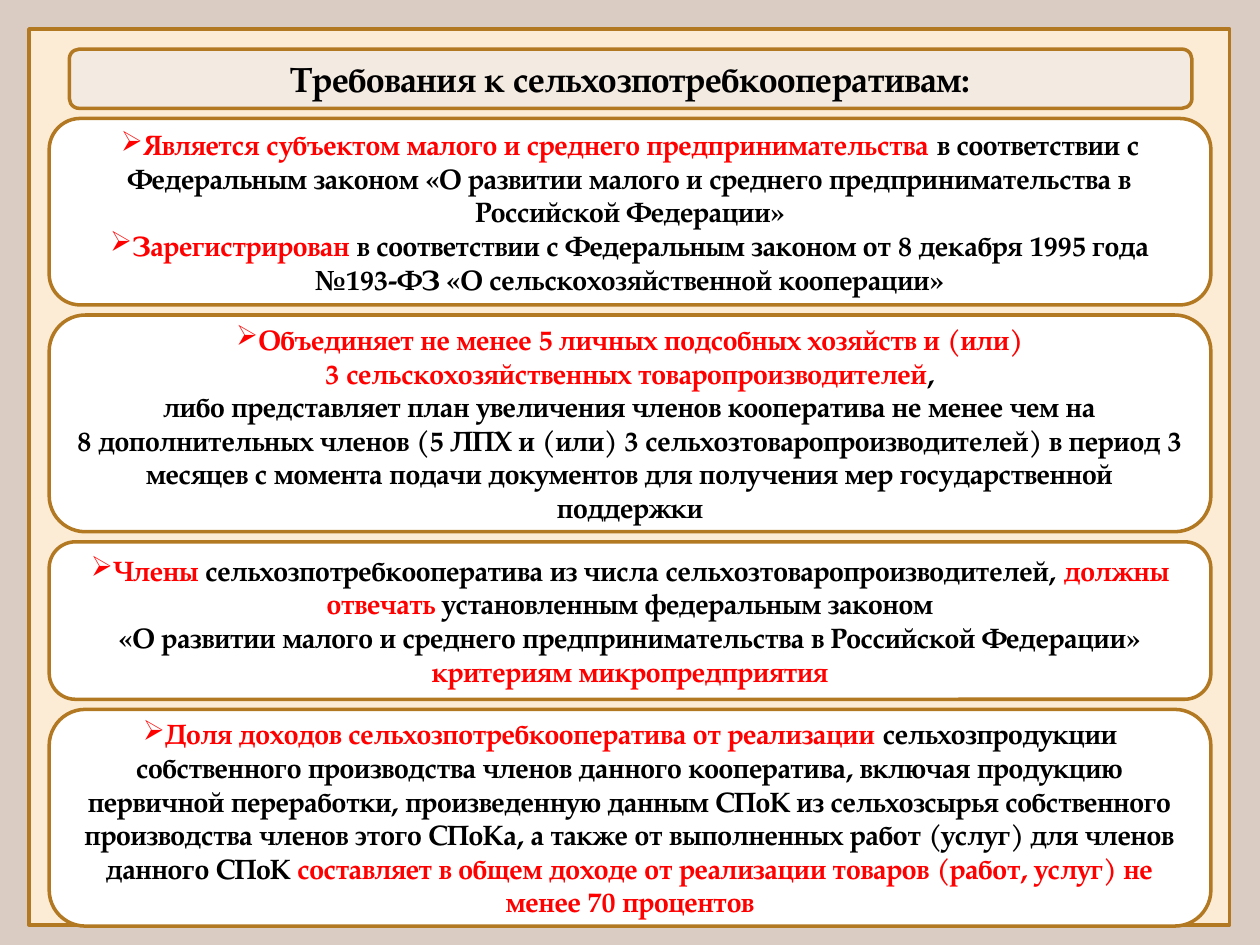
from lxml import etree
from pptx import Presentation
from pptx.dml.color import RGBColor
from pptx.enum.shapes import MSO_SHAPE
from pptx.enum.text import MSO_ANCHOR, PP_ALIGN
from pptx.oxml.ns import qn
from pptx.util import Inches, Pt

RECTANGLE = MSO_SHAPE.RECTANGLE
ROUNDED = MSO_SHAPE.ROUNDED_RECTANGLE
MIDDLE = MSO_ANCHOR.MIDDLE
CENTER = PP_ALIGN.CENTER

BACKDROP = RGBColor(0xDA, 0xCB, 0xC3)
CREAM = RGBColor(0xFC, 0xEC, 0xD5)
BEIGE = RGBColor(0xF3, 0xEA, 0xE2)
WHITE = RGBColor(0xFF, 0xFF, 0xFF)
BROWN = RGBColor(0xB2, 0x78, 0x22)
BLACK = RGBColor(0, 0, 0)
RED = RGBColor(0xFF, 0, 0)

FONT = "TeX Gyre Pagella"
BULLET = "➢"
CARD_LEFT, CARD_TOP, CARD_WIDTH, CARD_GAP = 0.39, 0.94, 9.22, 0.08

# Each card: height and paragraphs; a paragraph is (has bullet, spans).
REQUIREMENTS = [
    (1.48, [
        (True, [
            ("Является субъектом малого и среднего предпринимательства ", RED),
            ("в соответствии с Федеральным законом «О развитии малого и среднего "
             "предпринимательства в Российской Федерации»", BLACK)]),
        (True, [
            ("Зарегистрирован ", RED),
            ("в соответствии с Федеральным законом от 8 декабря 1995 года "
             "№193-ФЗ «О сельскохозяйственной кооперации»", BLACK)]),
    ]),
    (1.72, [
        (True, [("Объединяет не менее 5 личных подсобных хозяйств и (или)", RED)]),
        (False, [("3 сельскохозяйственных товаропроизводителей", RED), (",", BLACK)]),
        (False, [("либо представляет план увеличения членов кооператива "
                  "не менее чем на", BLACK)]),
        (False, [("8 дополнительных членов (5 ЛПХ и (или) 3 сельхозтоваропроизводителей) "
                  "в период 3 месяцев с момента подачи документов для получения мер "
                  "государственной поддержки", BLACK)]),
    ]),
    (1.25, [
        (True, [
            ("Члены", RED),
            (" сельхозпотребкооператива из числа сельхозтоваропроизводителей, ", BLACK),
            ("должны отвечать ", RED),
            ("установленным федеральным законом", BLACK)]),
        (False, [
            ("«О развитии малого и среднего предпринимательства "
             "в Российской Федерации» ", BLACK),
            ("критериям микропредприятия", RED)]),
    ]),
    (1.72, [
        (True, [
            ("Доля доходов сельхозпотребкооператива от реализации ", RED),
            ("сельхозпродукции собственного производства членов данного кооператива, "
             "включая продукцию первичной переработки, произведенную данным СПоК "
             "из сельхозсырья собственного производства членов этого СПоКа, а также "
             "от выполненных работ (услуг) для членов данного СПоК ", BLACK),
            ("составляет в общем доходе от реализации товаров (работ, услуг) "
             "не менее 70 процентов", RED)]),
    ]),
]


def add_panel(page, kind, left, top, width, height, fill):
    panel = page.shapes.add_shape(
        kind, Inches(left), Inches(top), Inches(width), Inches(height))
    panel.shadow.inherit = False
    panel.fill.solid()
    panel.fill.fore_color.rgb = fill
    panel.line.color.rgb = BROWN
    panel.line.width = Pt(2)
    return panel


def add_bullet(para):
    properties = para._p.get_or_add_pPr()
    properties.set("marL", "0")
    properties.set("indent", "0")
    etree.SubElement(properties, qn("a:buChar")).set("char", BULLET)


def write_paragraphs(panel, paragraphs, size):
    frame = panel.text_frame
    frame.word_wrap = True
    frame.vertical_anchor = MIDDLE
    for index, (has_bullet, spans) in enumerate(paragraphs):
        para = frame.add_paragraph() if index else frame.paragraphs[0]
        para.alignment = CENTER
        if has_bullet:
            add_bullet(para)
        for text, color in spans:
            span = para.add_run()
            span.text = text
            span.font.name = FONT
            span.font.size = Pt(size)
            span.font.bold = True
            span.font.color.rgb = color


def add_title(page, left, top, width, height):
    panel = add_panel(page, ROUNDED, left, top, width, height, BEIGE)
    title = [("Требования к сельхозпотребкооперативам:", BLACK)]
    write_paragraphs(panel, [(False, title)], 20)


def add_requirements(page, left, top, width):
    """Stack the requirement cards downwards with equal gaps."""
    for height, paragraphs in REQUIREMENTS:
        card = add_panel(page, ROUNDED, left, top, width, height, WHITE)
        write_paragraphs(card, paragraphs, 16)
        top += height + CARD_GAP


def main():
    deck = Presentation()
    deck.slide_width, deck.slide_height = Inches(10), Inches(7.5)
    page = deck.slides.add_slide(deck.slide_layouts[6])
    page.background.fill.solid()
    page.background.fill.fore_color.rgb = BACKDROP
    add_panel(page, RECTANGLE, 0.23, 0.23, 9.53, 7.11, CREAM)
    add_title(page, 0.55, 0.39, 8.91, 0.47)
    add_requirements(page, CARD_LEFT, CARD_TOP, CARD_WIDTH)
    deck.save("out.pptx")


if __name__ == "__main__":
    main()
